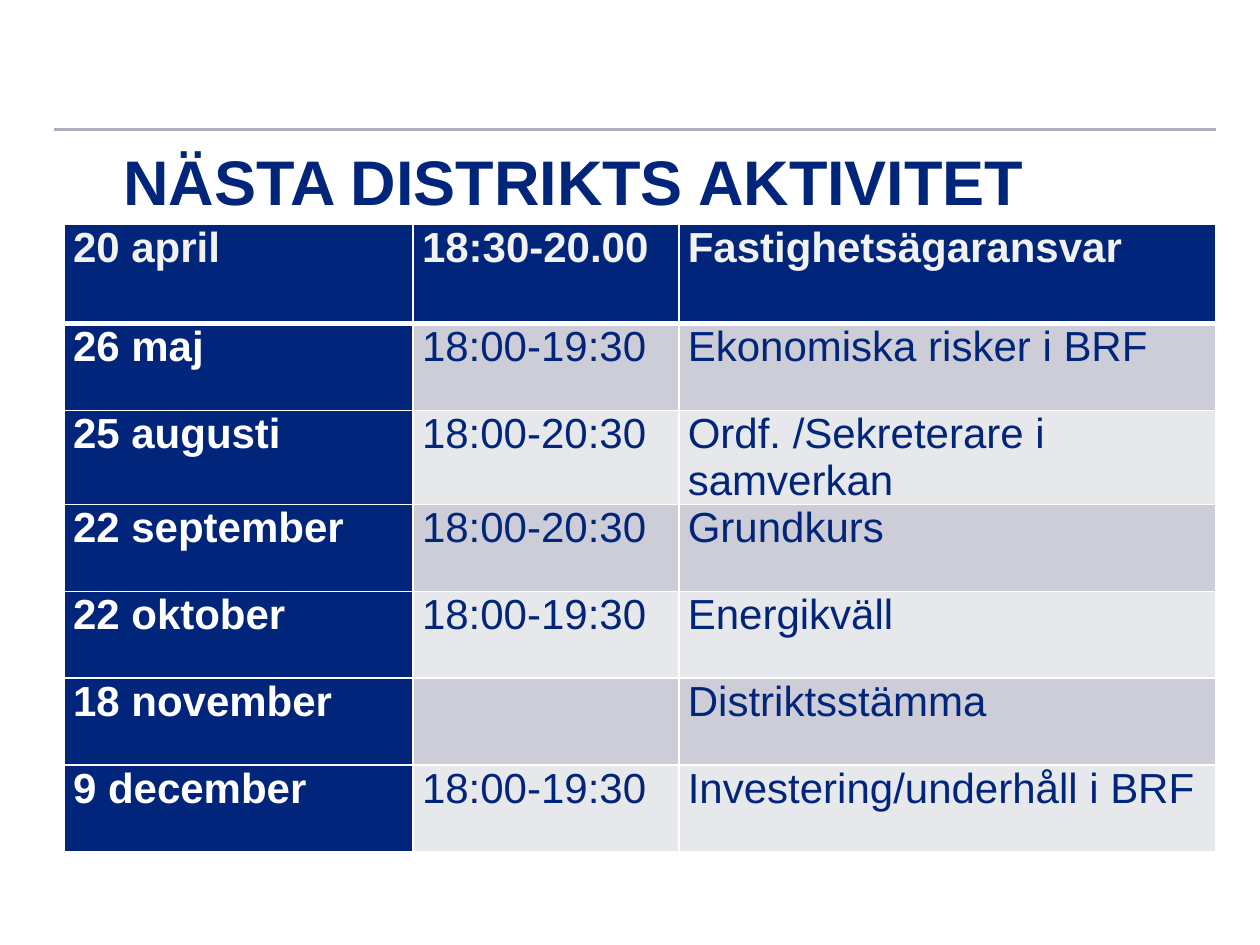
"""Build the slide listing the district's upcoming activities."""
from typing import NamedTuple

import pptx
import pptx.dml.color
import pptx.enum.shapes
import pptx.enum.text
import pptx.oxml
import pptx.oxml.ns
import pptx.util
from pptx.util import Inches

COLORS = {
    "navy": "00257A",
    "white": "FFFFFF",
    "header_text": "F2F2F2",
    "dark_band": "CCCDD7",
    "light_band": "E7E8EC",
    "rule": "B5ACBD",
}
FONT = "Arial"
COLUMN_WIDTHS = (2.77, 2.11, 4.26)
HEADER_HEIGHT, ROW_HEIGHT = 0.79, 0.69


class Activity(NamedTuple):
    date: str
    time: str
    topic: str


ACTIVITIES = [
    Activity("20 april", "18:30-20.00", "Fastighetsägaransvar"),
    Activity("26 maj", "18:00-19:30", "Ekonomiska risker i BRF"),
    Activity("25 augusti", "18:00-20:30", "Ordf. /Sekreterare i samverkan"),
    Activity("22 september", "18:00-20:30", "Grundkurs"),
    Activity("22 oktober", "18:00-19:30", "Energikväll"),
    Activity("18 november", "", "Distriktsstämma"),
    Activity("9 december", "18:00-19:30", "Investering/underhåll i BRF"),
]


def rgb(name: str) -> pptx.dml.color.RGBColor:
    return pptx.dml.color.RGBColor.from_string(COLORS[name])


def set_font(p, size: float, color: str, bold: bool) -> None:
    p.font.name = FONT
    p.font.size = pptx.util.Pt(size)
    p.font.bold = bold
    p.font.color.rgb = rgb(color)


def add_border(cell, side: str, width: float) -> None:
    cell._tc.get_or_add_tcPr().append(pptx.oxml.parse_xml(
        f'<a:ln{side} {pptx.oxml.ns.nsdecls("a")} w="{pptx.util.Pt(width)}">'
        f'<a:solidFill><a:srgbClr val="{COLORS["white"]}"/></a:solidFill></a:ln{side}>'
    ))


def format_cell(cell, text: str, row: int, col: int) -> None:
    header = row == 0
    bold = header or col == 0
    band = "dark_band" if row % 2 else "light_band"
    cell.margin_left = cell.margin_right = Inches(0.07)
    cell.margin_top = cell.margin_bottom = 0
    for side in "LRTB":
        thick = (row, side) in ((0, "B"), (1, "T"))
        add_border(cell, side, 3 if thick else 1)
    cell.fill.solid()
    cell.fill.fore_color.rgb = rgb("navy" if bold else band)
    cell.text = text
    color = "header_text" if header else "white" if bold else "navy"
    set_font(cell.text_frame.paragraphs[0], 24, color, bold)


def add_schedule(slide, activities: list[Activity]) -> None:
    heights = [HEADER_HEIGHT] + [ROW_HEIGHT] * (len(activities) - 1)
    table = slide.shapes.add_table(
        len(activities), len(COLUMN_WIDTHS), Inches(0.51), Inches(1.78),
        Inches(sum(COLUMN_WIDTHS)), Inches(sum(heights)),
    ).table
    for column, width in zip(table.columns, COLUMN_WIDTHS):
        column.width = Inches(width)
    for row, (activity, height) in enumerate(zip(activities, heights)):
        table.rows[row].height = Inches(height)
        for col, text in enumerate(activity):
            format_cell(table.cell(row, col), text, row, col)


def add_rule(slide) -> None:
    line = slide.shapes.add_connector(
        pptx.enum.shapes.MSO_CONNECTOR.STRAIGHT,
        Inches(0.43), Inches(1.03), Inches(9.65), Inches(1.03),
    )
    line.line.color.rgb = rgb("rule")
    line.line.width = pptx.util.Pt(1.5)
    line._element.spPr.append(pptx.oxml.parse_xml(
        f'<a:effectLst {pptx.oxml.ns.nsdecls("a")}/>'
    ))


def set_title(slide, text: str) -> None:
    title = slide.shapes.title
    title.left, title.top = Inches(0.88), Inches(1.07)
    title.width, title.height = Inches(8.77), Inches(0.71)
    tf = title.text_frame
    tf.text = text
    tf.auto_size = pptx.enum.text.MSO_AUTO_SIZE.NONE
    tf.vertical_anchor = pptx.enum.text.MSO_ANCHOR.BOTTOM
    p = tf.paragraphs[0]
    p.alignment = pptx.enum.text.PP_ALIGN.LEFT
    set_font(p, 36, "navy", True)


def main() -> None:
    prs = pptx.Presentation()
    prs.slide_width, prs.slide_height = Inches(10), Inches(7.5)
    slide = prs.slides.add_slide(prs.slide_layouts[5])
    add_rule(slide)
    set_title(slide, "NÄSTA DISTRIKTS AKTIVITET")
    add_schedule(slide, ACTIVITIES)
    prs.save("out.pptx")


if __name__ == "__main__":
    main()
